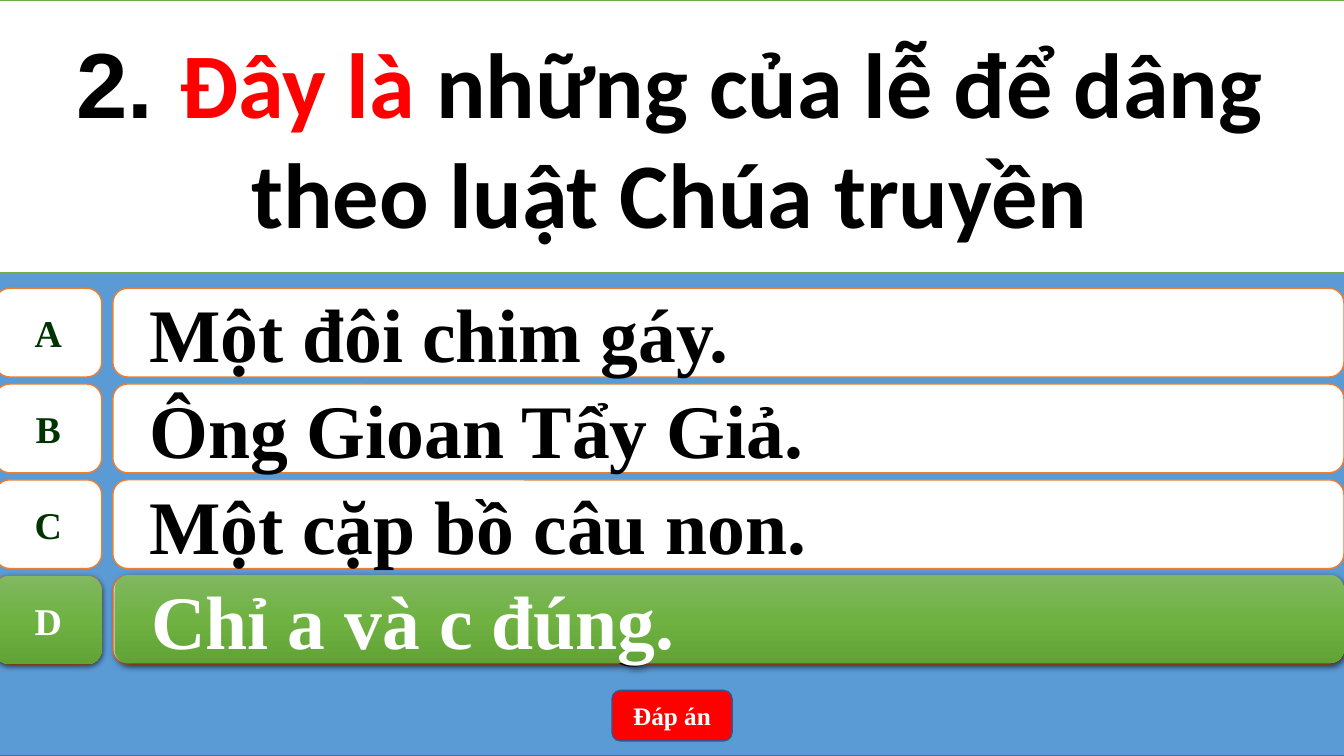
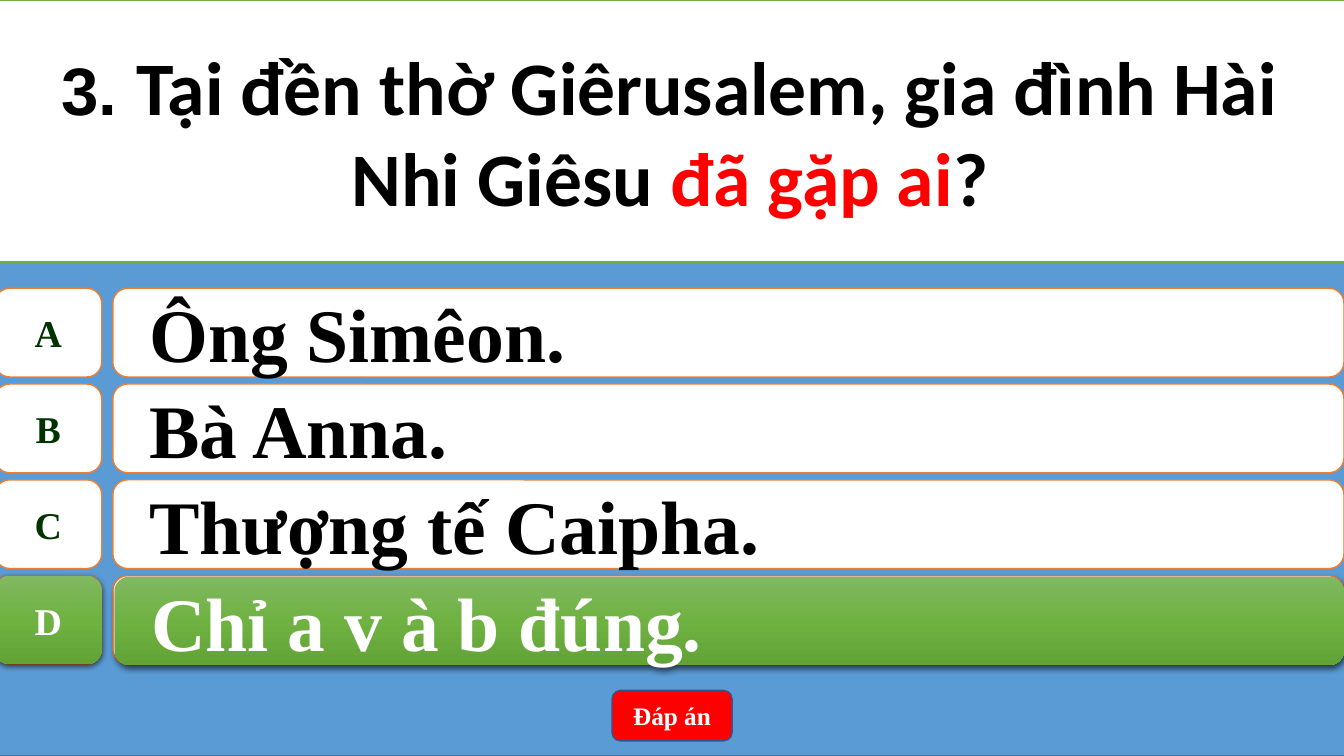
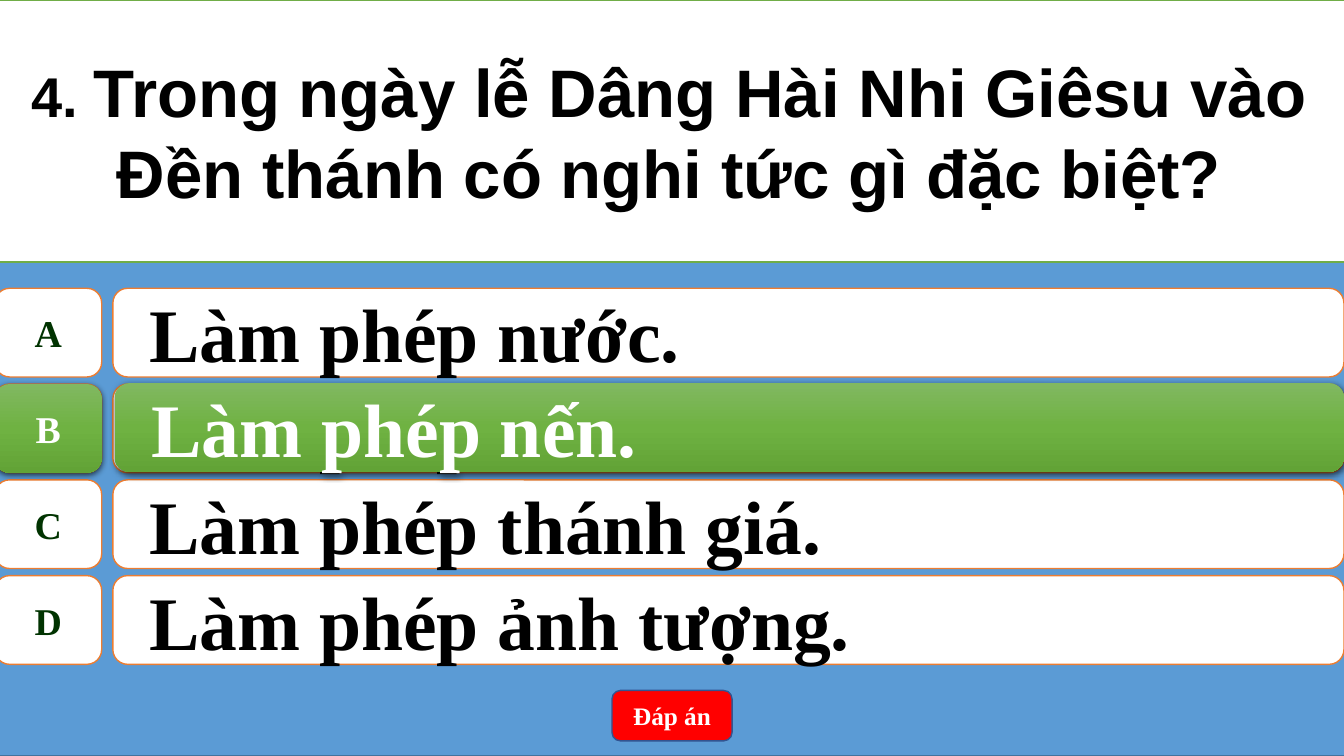
from copy import deepcopy

from lxml.etree import SubElement
from pptx import Presentation
from pptx.dml.color import RGBColor
from pptx.enum.shapes import MSO_SHAPE
from pptx.enum.text import MSO_ANCHOR, PP_ALIGN
from pptx.oxml.ns import qn
from pptx.util import Inches, Pt

WHITE = RGBColor(0xFF, 0xFF, 0xFF)
BLACK = RGBColor(0x00, 0x00, 0x00)
RED = RGBColor(0xFF, 0x00, 0x00)
BLUE = RGBColor(0x5B, 0x9B, 0xD5)
BLUE_EDGE = RGBColor(0x43, 0x73, 0x9E)
NAVY = RGBColor(0x32, 0x54, 0x91)
ORANGE = RGBColor(0xED, 0x7D, 0x31)
GREEN = RGBColor(0x70, 0xAD, 0x47)
DARK_GREEN = RGBColor(0x00, 0x33, 0x00)
GREEN_STOPS = ((0, RGBColor(0x81, 0xB8, 0x61)),
               (0.5, RGBColor(0x6F, 0xB2, 0x42)),
               (1, RGBColor(0x62, 0xA3, 0x36)))

SERIF, SANS, BODY = "Times New Roman", "Arial", "Calibri"

# Percent of the slide: columns are (left, width), rows start at FIRST_ROW
FULL_COL = (-0.38, 100.43)
LETTER_COL = (-0.38, 7.95)
ANSWER_COL = (8.4, 91.6)
MARKED_COL = (8.55, 91.45)
BUTTON_COL = (45.54, 8.93)
FIRST_ROW, ROW_STEP, ROW_HEIGHT = 38.13, 12.67, 11.73
BUTTON_ROW = (91.33, 6.67)


class Quiz:
    def __init__(self):
        self.prs = Presentation()
        self.prs.slide_width, self.prs.slide_height = Inches(13.33), Inches(7.5)
        self.s = None

    def new_slide(self):
        self.s = self.prs.slides.add_slide(self.prs.slide_layouts[6])
        self.box(self.s.shapes, MSO_SHAPE.RECTANGLE, FULL_COL, (0, 100), BLUE, BLUE_EDGE)

    def box(self, shapes, kind, col, row, fill, edge):
        """Add a filled shape; col and row are (start, length) in percent."""
        x, w = (round(self.prs.slide_width * v / 100) for v in col)
        y, h = (round(self.prs.slide_height * v / 100) for v in row)
        sp = shapes.add_shape(kind, x, y, w, h)
        sp.shadow.inherit = False
        sp.fill.solid()
        sp.fill.fore_color.rgb = fill
        sp.line.color.rgb = edge
        sp.line.width = Pt(1)
        return sp

    def label(self, sp, runs, align=PP_ALIGN.CENTER, wrap=True):
        """Fill a shape with bold runs of (text, size, font, colour)."""
        tf = sp.text_frame
        tf.word_wrap = wrap
        tf.vertical_anchor = MSO_ANCHOR.MIDDLE
        p = tf.paragraphs[0]
        p.alignment = align
        for text, size, font, color in runs:
            r = p.add_run()
            r.text = text
            for name, value in {"size": Pt(size), "name": font, "bold": True}.items():
                setattr(r.font, name, value)
            r.font.color.rgb = color
        return p

    def glow(self, sp):
        """Give a shape the green gradient and soft shadow of the right answer."""
        sp.line.fill.background()
        sp.fill.gradient()
        sp.fill.gradient_angle = 270
        spPr = sp._element.spPr
        stops = spPr.find(".//" + qn("a:gsLst"))
        stops.insert(1, deepcopy(stops[0]))
        for stop, (position, color) in zip(sp.fill.gradient_stops, GREEN_STOPS):
            stop.position = position
            stop.color.rgb = color
        shadow = SubElement(spPr.find(qn("a:effectLst")), qn("a:outerShdw"),
                            blurRad="57150", dist="19050", dir="5400000",
                            algn="ctr", rotWithShape="0")
        color = SubElement(shadow, qn("a:srgbClr"), val="000000")
        SubElement(color, qn("a:alpha"), val="63000")

    def answer(self, index, text, marked=False, shift=0):
        """Add a letter and its answer; shift moves the answer box in percent."""
        shapes = self.s.shapes.add_group_shape().shapes
        top = FIRST_ROW + index * ROW_STEP
        letter = self.box(shapes, MSO_SHAPE.FLOWCHART_ALTERNATE_PROCESS, LETTER_COL,
                          (top, ROW_HEIGHT), WHITE, ORANGE)
        self.label(letter, [("ABCD"[index], 27, SERIF, WHITE if marked else DARK_GREEN)],
                   wrap=False)
        bar = self.box(shapes, MSO_SHAPE.ROUNDED_RECTANGLE,
                       MARKED_COL if marked else ANSWER_COL,
                       (top + shift, ROW_HEIGHT), WHITE, ORANGE)
        p = self.label(bar, [(text, 54, SERIF, WHITE if marked else BLACK)], PP_ALIGN.LEFT)
        p.level = 1
        pPr = p._p.get_or_add_pPr()
        for name, value in {"marL": Inches(0.5), "indent": Inches(-0.28)}.items():
            pPr.set(name, str(value))
        if marked:
            for sp in (letter, bar):
                self.glow(sp)

    def button(self, text):
        sp = self.box(self.s.shapes, MSO_SHAPE.ROUNDED_RECTANGLE, BUTTON_COL,
                      BUTTON_ROW, RED, NAVY)
        self.label(sp, [(text, 18, SERIF, WHITE)])

    def question(self, runs, height):
        sp = self.box(self.s.shapes, MSO_SHAPE.RECTANGLE, FULL_COL, (0, height), WHITE, GREEN)
        self.label(sp, runs)


QUESTIONS = [
    {"runs": [("2. ", 66, SANS, BLACK),
              ("Đây là ", 66, BODY, RED),
              ("những của lễ để dâng theo luật Chúa truyền", 66, BODY, BLACK)],
     "height": 36.13, "right": 3, "shift": -0.13,
     "answers": ["Một đôi chim gáy.", "Ông Gioan Tẩy Giả.",
                 "Một cặp bồ câu non.", "Chỉ a và c đúng."]},
    {"runs": [("3. ", 48, SANS, BLACK),
              ("Tại đền thờ Giêrusalem, gia đình Hài Nhi Giêsu ", 54, BODY, BLACK),
              ("đã gặp ai", 54, BODY, RED),
              ("?", 54, BODY, BLACK)],
     "height": 34.67, "right": 3, "shift": 0.13,
     "answers": ["Ông Simêon.", "Bà Anna.", "Thượng tế Caipha.", "Chỉ a v à b đúng."]},
    {"runs": [("4. ", 40, SANS, BLACK),
              ("Trong ngày lễ Dâng Hài Nhi Giêsu vào Đền thánh có nghi tức gì đặc biệt?",
               48, SANS, BLACK)],
     "height": 34.67, "right": 1, "shift": -0.13,
     "answers": ["Làm phép nước.", "Làm phép nến.",
                 "Làm phép thánh giá.", "Làm phép ảnh tượng."]},
]


def main():
    quiz = Quiz()
    for q in QUESTIONS:
        quiz.new_slide()
        for index, text in enumerate(q["answers"]):
            quiz.answer(index, text)
        quiz.button("Đáp án")
        quiz.answer(q["right"], q["answers"][q["right"]], marked=True, shift=q["shift"])
        quiz.question(q["runs"], q["height"])
    quiz.prs.save("out.pptx")


if __name__ == "__main__":
    main()
